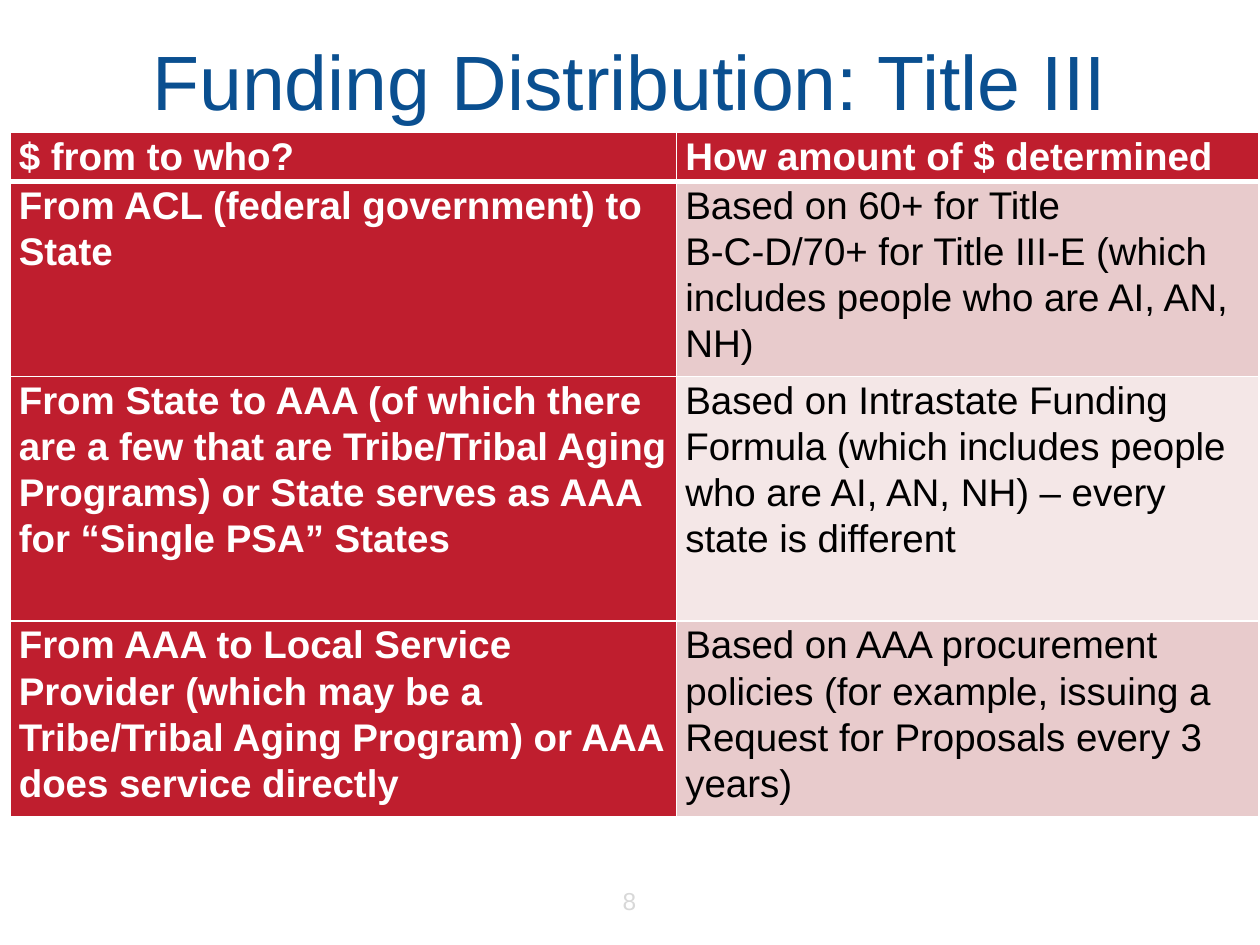
from lxml import etree
from pptx import Presentation
from pptx.dml.color import RGBColor
from pptx.enum import text
from pptx.oxml import ns
from pptx.util import Inches, Pt

WHITE, BLACK, RED, BLUE, GREY = "FFFFFF", "000000", "BF1E2E", "0A4F90", "D8D8D8"
BANDS = ["E8CBCC", "F4E7E7"]
COLUMN_WIDTHS = [5.29, 4.62]
ROW_HEIGHTS = [0.39, 1.55, 1.94, 1.55]
FUNDING_STEPS = [
    ("$ from to who?", "How amount of $ determined"),
    ("From ACL (federal government) to State",
     "Based on 60+ for Title B-C-D/70+ for Title III-E "
     "(which includes people who are AI, AN, NH)"),
    ("From State to AAA (of which there are a few that are Tribe/Tribal Aging "
     "Programs) or State serves as AAA for “Single PSA” States",
     "Based on Intrastate Funding Formula (which includes people who are "
     "AI, AN, NH) – every state is different"),
    ("From AAA to Local Service Provider (which may be a Tribe/Tribal Aging "
     "Program) or AAA does service directly",
     "Based on AAA procurement policies (for example, issuing a Request for "
     "Proposals every 3 years)"),
]


def color(value):
    """Turn a hex string into a colour."""
    return RGBColor.from_string(value)


def add_run(paragraph, words, size, ink, bold=False):
    """Add one formatted run to a paragraph."""
    run = paragraph.add_run()
    run.text = words
    run.font.name = "Arial"
    run.font.size = Pt(size)
    run.font.bold = bold
    run.font.color.rgb = color(ink)


def place(part, box):
    """Move a shape to a box given in inches."""
    part.left, part.top, part.width, part.height = map(Inches, box)


def fill_line(frame, words, size, ink):
    """Write one centred line into a text frame."""
    frame.word_wrap = True
    frame.auto_size = text.MSO_AUTO_SIZE.NONE
    frame.vertical_anchor = text.MSO_ANCHOR.MIDDLE
    paragraph = frame.paragraphs[0]
    paragraph.alignment = text.PP_ALIGN.CENTER
    add_run(paragraph, words, size, ink)


def add_title(slide, box):
    """Place the heading in the title placeholder."""
    heading = slide.shapes.title
    place(heading, box)
    fill_line(heading.text_frame, "Funding Distribution: Title III", 44, BLUE)


def add_page_number(slide, box):
    """Place the page number."""
    number = slide.shapes.add_textbox(*map(Inches, box))
    fill_line(number.text_frame, "8", 14, GREY)


def set_borders(cell, widths):
    """Draw white cell borders with a width in points for each side."""
    properties = cell._tc.get_or_add_tcPr()
    for index, (side, width) in enumerate(widths.items()):
        line = etree.Element(ns.qn(f"a:ln{side}"), w=str(Pt(width)))
        solid = etree.SubElement(line, ns.qn("a:solidFill"))
        etree.SubElement(solid, ns.qn("a:srgbClr"), val=WHITE)
        properties.insert(index, line)


def format_cell(cell, words, row, column):
    """Fill one cell according to its row and column."""
    is_heading = row == 0 or column == 0
    cell.margin_left = cell.margin_right = Inches(0.07)
    cell.margin_top = cell.margin_bottom = 0
    cell.fill.solid()
    cell.fill.fore_color.rgb = color(RED if is_heading else BANDS[(row - 1) % 2])
    set_borders(cell, {"L": 1, "R": 1, "T": 3 if row == 1 else 1,
                       "B": 3 if row == 0 else 1})
    paragraph = cell.text_frame.paragraphs[0]
    paragraph.line_spacing = 1.07
    add_run(paragraph, words, 22, WHITE if is_heading else BLACK, is_heading)


def add_funding_table(slide, box):
    """Place the table of funding steps."""
    table = slide.shapes.add_table(
        len(ROW_HEIGHTS), len(COLUMN_WIDTHS), *map(Inches, box)).table
    table.first_col = True
    for column, width in zip(table.columns, COLUMN_WIDTHS):
        column.width = Inches(width)
    for row, height in zip(table.rows, ROW_HEIGHTS):
        row.height = Inches(height)
    for row, step in enumerate(FUNDING_STEPS):
        for column, words in enumerate(step):
            format_cell(table.cell(row, column), words, row, column)


def main():
    """Build and save the slide."""
    deck = Presentation()
    deck.slide_width, deck.slide_height = Inches(10), Inches(7.5)
    slide = deck.slides.add_slide(deck.slide_layouts[5])
    add_title(slide, (0, 0.01, 10, 1.25))
    add_page_number(slide, (3.83, 6.95, 2.33, 0.4))
    add_funding_table(slide, (0.08, 1.05, sum(COLUMN_WIDTHS), sum(ROW_HEIGHTS)))
    deck.save("out.pptx")


if __name__ == "__main__":
    main()
